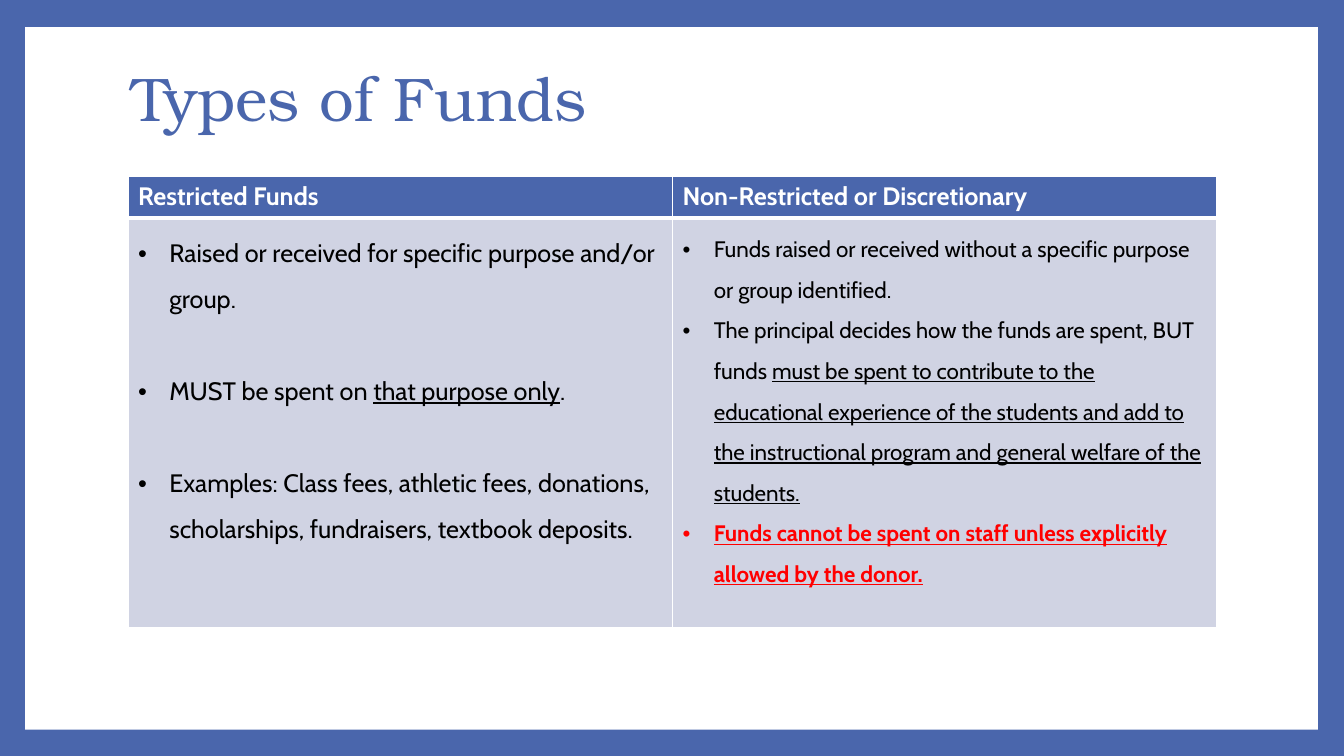
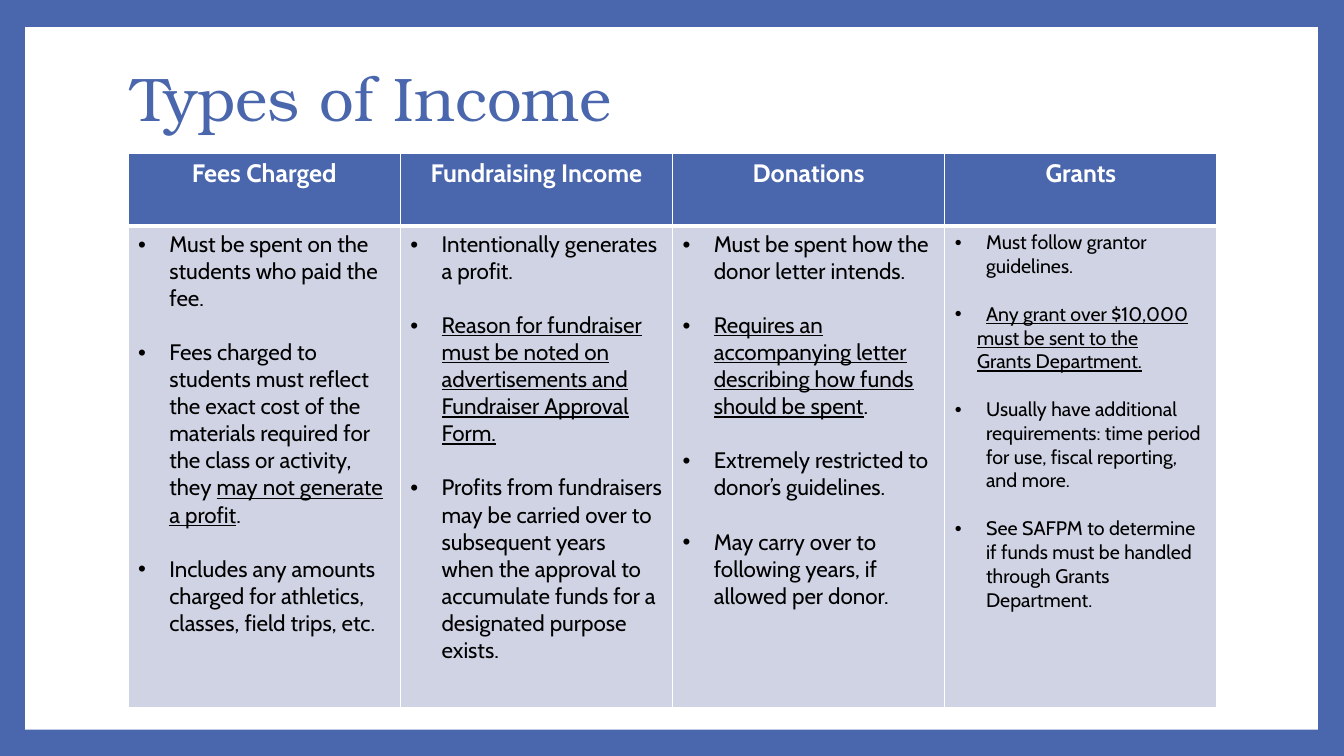
"""Build two slides that compare the types of funds and of income in tables."""
from dataclasses import dataclass

from lxml.etree import SubElement
from pptx import Presentation
from pptx.dml.color import RGBColor
from pptx.enum.shapes import MSO_SHAPE as Preset
from pptx.enum.text import MSO_ANCHOR as Anchor, MSO_AUTO_SIZE as AutoSize, PP_ALIGN as Align
from pptx.oxml.ns import qn
from pptx.util import Inches, Pt

COLORS = {"blue": "4A66AC", "white": "FFFFFF", "pale": "D0D3E3", "black": "000000", "red": "FF0000"}
TITLE_FONT, BODY_FONT = "TeX Gyre Bonum", "Cabin"
SLIDE_WIDTH, SLIDE_HEIGHT = 13.33, 7.5
FRAME = (0.25, 0.27, 12.82, 6.97)
TITLE = (1.2, 0.27, 10.8, 1.48)
TABLE_LEFT, TABLE_WIDTH = 1.27, 10.8
HANG, PLAIN_INDENT = 0.31, 0.22
LINE_RATIO = 1.21


@dataclass
class Item:
    text: str
    bullet: bool = True
    color: str = "black"
    bold: bool = False


@dataclass
class Column:
    heading: str
    items: list
    size: int = 16
    gaps: bool = True


FUNDS = [
    Column("Restricted Funds", [
        Item("Raised or received for specific purpose and/or group."),
        Item("MUST be spent on _that purpose only_."),
        Item("Examples: Class fees, athletic fees, donations, scholarships, fundraisers, "
             "textbook deposits."),
    ], size=18),
    Column("Non-Restricted or Discretionary", [
        Item("Funds raised or received without a specific purpose or group identified."),
        Item("The principal decides how the funds are spent, BUT funds _must be spent to "
             "contribute to the educational experience of the students and add to the "
             "instructional program and general welfare of the students._"),
        Item("_Funds cannot be spent on staff unless explicitly allowed by the donor._",
             color="red", bold=True),
    ], gaps=False),
]

INCOME = [
    Column("Fees Charged", [
        Item("Must be spent on the students who paid the fee."),
        Item("Fees charged to students must reflect the exact cost of the materials required "
             "for the class or activity, they _may not generate a profit_."),
        Item("Includes any amounts charged for athletics, classes, field trips, etc."),
    ]),
    Column("Fundraising Income", [
        Item("Intentionally generates a profit."),
        Item("_Reason for fundraiser must be noted on advertisements and Fundraiser "
             "Approval Form._"),
        Item("Profits from fundraisers may be carried over to subsequent years when the "
             "approval to accumulate funds for a designated purpose exists."),
    ]),
    Column("Donations", [
        Item("Must be spent how the donor letter intends."),
        Item("_Requires an accompanying letter describing how funds should be spent_."),
        Item("Extremely restricted to donor’s guidelines."),
        Item("May carry over to following years, if allowed per donor."),
    ]),
    Column("Grants", [
        Item("Must follow grantor guidelines."),
        Item("_Any grant over $10,000_"),
        Item("_must be sent to the_", bullet=False),
        Item("_Grants Department._", bullet=False),
        Item("Usually have additional requirements: time period for use, fiscal reporting, "
             "and more."),
        Item("See SAFPM to determine if funds must be handled through Grants Department."),
    ], size=14),
]


def rgb(name):
    """Return a named colour."""
    return RGBColor.from_string(COLORS[name])


def paint(fill, color):
    """Apply a solid named colour to a fill."""
    fill.solid()
    fill.fore_color.rgb = rgb(color)


def write(paragraph, text, size=18, color="black", font=BODY_FONT, bold=False,
          align=Align.LEFT, spacing=1.0, before=0):
    """Write text into a paragraph, underlining the parts between underscores."""
    paragraph.alignment = align
    paragraph.line_spacing = spacing
    paragraph.space_before = Pt(before)
    for index, part in enumerate(text.split("_")):
        if part:
            run = paragraph.add_run()
            run.text = part
            run.font.name = font
            run.font.size = Pt(size)
            run.font.bold = bold
            run.font.underline = index % 2 == 1
            run.font.color.rgb = rgb(color)


def indent(paragraph, bullet):
    """Indent a paragraph, with a hanging bullet if wanted."""
    properties = paragraph._p.get_or_add_pPr()
    properties.set("marL", str(Inches(HANG if bullet else PLAIN_INDENT)))
    properties.set("indent", str(Inches(-HANG if bullet else 0)))
    if bullet:
        SubElement(properties, qn("a:buFont"), typeface="Arial")
        SubElement(properties, qn("a:buChar"), char="•")


def style_cell(cell, color, **widths):
    """Give a cell white borders, one point wide unless stated, and a fill."""
    properties = cell._tc.get_or_add_tcPr()
    for side in "LRTB":
        line = SubElement(properties, qn(f"a:ln{side}"), w=str(Pt(widths.get(side, 1))))
        SubElement(SubElement(line, qn("a:solidFill")), qn("a:srgbClr"), val=COLORS["white"])
    paint(cell.fill, color)


def fill_body(cell, column, spacing):
    """List the items of a column in its body cell."""
    gap = column.size * LINE_RATIO * spacing if column.gaps else 0
    for index, item in enumerate(column.items):
        paragraph = cell.text_frame.add_paragraph() if index else cell.text_frame.paragraphs[0]
        write(paragraph, item.text, size=column.size, color=item.color, bold=item.bold,
              spacing=spacing, before=gap if index and item.bullet else 0)
        indent(paragraph, item.bullet)


def add_fund_table(slide, columns, top, row_heights, align, spacing):
    """Add a table with equal columns, each a heading over a list."""
    table = slide.shapes.add_table(
        2, len(columns), Inches(TABLE_LEFT), Inches(top),
        Inches(TABLE_WIDTH), Inches(sum(row_heights))).table
    for row, height in zip(table.rows, row_heights):
        row.height = Inches(height)
    for index, column in enumerate(columns):
        table.columns[index].width = Inches(TABLE_WIDTH / len(columns))
        heading, body = table.cell(0, index), table.cell(1, index)
        style_cell(heading, "blue", B=3)
        style_cell(body, "pale", T=3)
        write(heading.text_frame.paragraphs[0], column.heading, color="white", bold=True,
              align=align)
        fill_body(body, column, spacing)


def add_titled_slide(presentation, title):
    """Add a slide with a formatted title."""
    slide = presentation.slides.add_slide(presentation.slide_layouts[5])
    shape = slide.shapes.title
    shape.left, shape.top, shape.width, shape.height = map(Inches, TITLE)
    frame = shape.text_frame
    frame.vertical_anchor = Anchor.MIDDLE
    frame.auto_size = AutoSize.NONE
    frame.word_wrap = True
    write(frame.paragraphs[0], title, size=44, color="blue", font=TITLE_FONT, spacing=0.9)
    return slide


def add_master_frame(presentation, slide):
    """Put the blue background and the white panel on the slide master."""
    master = presentation.slide_master
    paint(master.background.fill, "blue")
    panel = slide.shapes.add_shape(Preset.RECTANGLE, *map(Inches, FRAME))
    panel.shadow.inherit = False
    paint(panel.fill, "white")
    panel.line.fill.background()
    panel.element.xpath(".//p:cNvPr")[0].set("id", "99")
    master.shapes[0].element.addprevious(panel.element)


def main():
    """Build and save the presentation."""
    presentation = Presentation()
    presentation.slide_width = Inches(SLIDE_WIDTH)
    presentation.slide_height = Inches(SLIDE_HEIGHT)
    funds = add_titled_slide(presentation, "Types of Funds")
    add_master_frame(presentation, funds)
    add_fund_table(funds, FUNDS, 1.75, (0.41, 4.07), Align.LEFT, 1.5)
    income = add_titled_slide(presentation, "Types of Income")
    add_fund_table(income, INCOME, 1.52, (0.72, 4.78), Align.CENTER, 1.0)
    presentation.save("out.pptx")


if __name__ == "__main__":
    main()
